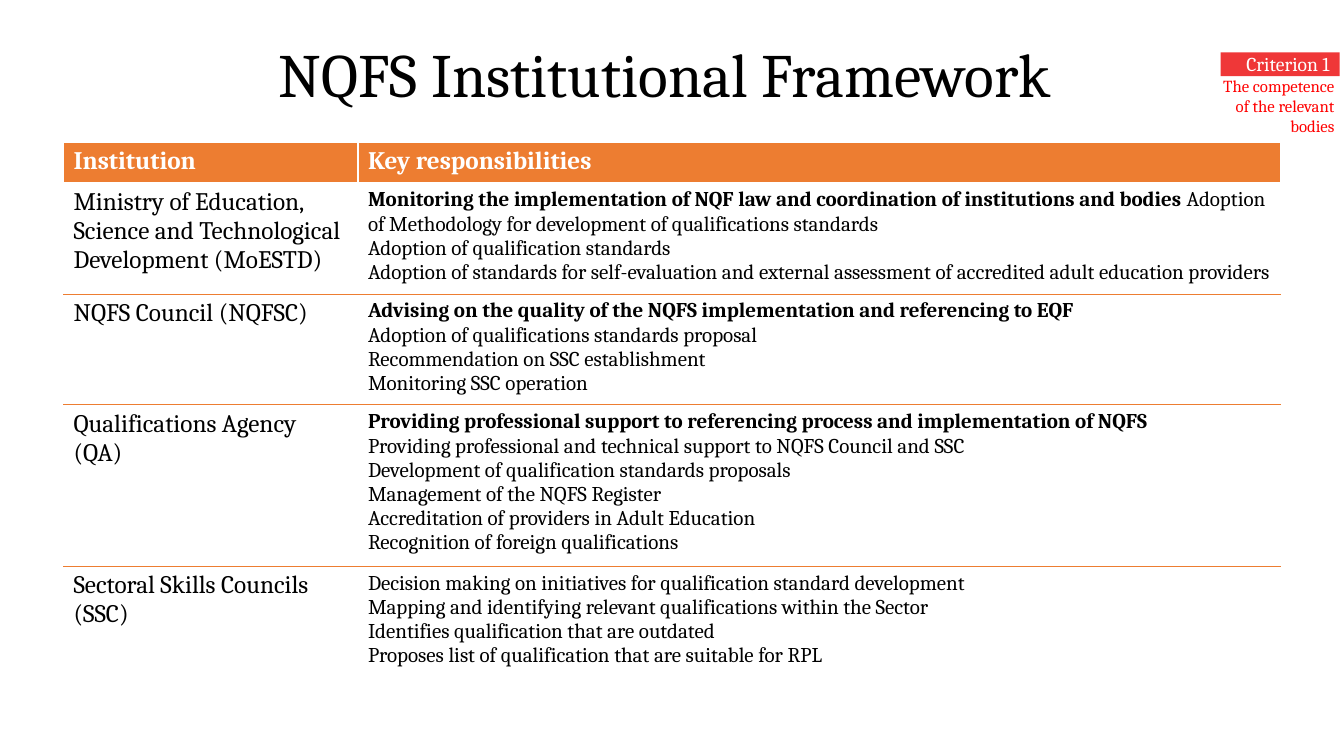
from dataclasses import dataclass

from lxml import etree
from pptx import Presentation
from pptx import util as u
from pptx.dml.color import RGBColor
from pptx.enum import shapes, text
from pptx.oxml import ns

COLORS = {
    "black": "000000",
    "white": "FFFFFF",
    "orange": "ED7D31",
    "badge": "EF3738",
    "red": "FF0000",
}
FONT = "Cambria"
PLAIN_TABLE_STYLE = "{2D5ABB26-0587-4C30-8999-92F81FD0307C}"
HEADER_HEIGHT = 1.03
COLUMN_WIDTHS = (7.42, 23.26)


@dataclass
class Institution:
    name: str
    mandate: str
    tasks: list[str]
    height: float
    tasks_follow_mandate: bool = False

    def paragraphs(self) -> list[list[tuple[str, bool]]]:
        lines = [[(task, False)] for task in self.tasks]
        if self.tasks_follow_mandate:
            lines[0].insert(0, (self.mandate + " ", True))
        elif self.mandate:
            lines.insert(0, [(self.mandate, True)])
        return lines


INSTITUTIONS = [
    Institution(
        "Ministry of Education, Science and Technological Development (MoESTD)",
        "Monitoring the implementation of NQF law and coordination of institutions and bodies",
        [
            "Adoption of Methodology for development of qualifications standards",
            "Adoption of qualification standards",
            "Adoption of standards for self-evaluation and external assessment "
            "of accredited adult education providers",
        ],
        2.7,
        tasks_follow_mandate=True,
    ),
    Institution(
        "NQFS Council (NQFSC)",
        "Advising on the quality of the NQFS implementation and referencing to EQF",
        [
            "Adoption of qualifications standards proposal",
            "Recommendation on SSC establishment",
            "Monitoring SSC operation",
        ],
        2.7,
    ),
    Institution(
        "Qualifications Agency (QA)",
        "Providing professional support to referencing process and implementation of NQFS",
        [
            "Providing professional and technical support to NQFS Council and SSC",
            "Development of qualification standards proposals",
            "Management of the NQFS Register",
            "Accreditation of providers in Adult Education",
            "Recognition of foreign qualifications",
        ],
        3.93,
    ),
    Institution(
        "Sectoral Skills Councils (SSC)",
        "",
        [
            "Decision making on initiatives for qualification standard development",
            "Mapping and identifying relevant qualifications within the Sector",
            "Identifies qualification that are outdated",
            "Proposes list of qualification that are suitable for RPL",
        ],
        2.7,
    ),
]


def rgb(color: str) -> RGBColor:
    return RGBColor.from_string(COLORS[color])


def write(frame, content, *, size, color="black", bold=False, align="LEFT",
          anchor="TOP", margins=(0.25, 0.13, 0.25, 0.13), spacing=None) -> None:
    paragraphs = [[(content, bold)]] if isinstance(content, str) else content
    frame.word_wrap = True
    frame.vertical_anchor = text.MSO_ANCHOR[anchor]
    frame.margin_left, frame.margin_top, frame.margin_right, frame.margin_bottom = map(u.Cm, margins)
    for index, runs in enumerate(paragraphs):
        paragraph = frame.add_paragraph() if index else frame.paragraphs[0]
        paragraph.alignment = text.PP_ALIGN[align]
        if spacing:
            paragraph.line_spacing = spacing
        for words, heavy in runs:
            run = paragraph.add_run()
            run.text = words
            run.font.name = FONT
            run.font.size = u.Pt(size)
            run.font.bold = heavy
            run.font.color.rgb = rgb(color)


def add_borders(cell, borders: dict[str, tuple[str, float]]) -> None:
    properties = cell._tc.get_or_add_tcPr()
    for side in "LRTB":
        if side in borders:
            color, width = borders[side]
            line = etree.SubElement(properties, ns.qn(f"a:ln{side}"), w=str(u.Pt(width)))
            fill = etree.SubElement(line, ns.qn("a:solidFill"))
            etree.SubElement(fill, ns.qn("a:srgbClr"), val=COLORS[color])


def add_criterion(slide) -> None:
    badge = slide.shapes.add_shape(
        shapes.MSO_SHAPE.RECTANGLE, u.Cm(30.76), u.Cm(1.32), u.Cm(3), u.Cm(0.6))
    badge.shadow.inherit = False
    badge.fill.solid()
    badge.fill.fore_color.rgb = rgb("badge")
    badge.line.fill.background()
    write(badge.text_frame, "Criterion 1", size=14, color="white", align="RIGHT",
          margins=(0.25, 0, 0.25, 0))
    description = slide.shapes.add_textbox(u.Cm(30.38), u.Cm(1.91), u.Cm(3.35), u.Cm(1.55))
    write(description.text_frame, "The competence of the relevant bodies", size=12,
          color="red", align="RIGHT", margins=(0.25, 0, 0.1, 0))


def add_responsibilities(slide) -> None:
    heights = [HEADER_HEIGHT] + [institution.height for institution in INSTITUTIONS]
    frame = slide.shapes.add_table(
        len(heights), len(COLUMN_WIDTHS), u.Cm(1.6), u.Cm(3.58),
        u.Cm(sum(COLUMN_WIDTHS)), u.Cm(sum(heights)))
    table = frame.table
    table.horz_banding = False
    table._tbl.tblPr.find(ns.qn("a:tableStyleId")).text = PLAIN_TABLE_STYLE
    for column, width in zip(table.columns, COLUMN_WIDTHS):
        column.width = u.Cm(width)
    for row, height in zip(table.rows, heights):
        row.height = u.Cm(height)

    for column, heading in enumerate(("Institution", "Key responsibilities")):
        cell = table.cell(0, column)
        add_borders(cell, dict.fromkeys("LRTB", ("white", 1)))
        cell.fill.solid()
        cell.fill.fore_color.rgb = rgb("orange")
        write_cell(cell, heading, size=18, color="white", bold=True)

    rule = ("orange", 0.5)
    for row, institution in enumerate(INSTITUTIONS, start=1):
        borders = {"T": ("white", 1) if row == 1 else rule}
        if row < len(INSTITUTIONS):
            borders["B"] = rule
        for column, (content, size) in enumerate(
                ((institution.name, 18), (institution.paragraphs(), 15))):
            cell = table.cell(row, column)
            add_borders(cell, borders)
            cell.fill.background()
            write_cell(cell, content, size=size)


def write_cell(cell, content, **style) -> None:
    write(cell.text_frame, content, **style)
    cell.vertical_anchor = text.MSO_ANCHOR.TOP
    body = cell.text_frame._txBody.find(ns.qn("a:bodyPr"))
    body.attrib.clear()


def main() -> None:
    deck = Presentation()
    deck.slide_width, deck.slide_height = u.Cm(33.87), u.Cm(19.05)
    slide = deck.slides.add_slide(deck.slide_layouts[6])
    add_criterion(slide)
    title = slide.shapes.add_textbox(u.Cm(2.33), u.Cm(1.02), u.Cm(29.21), u.Cm(1.85))
    write(title.text_frame, "NQFS Institutional Framework ", size=44, align="CENTER",
          anchor="MIDDLE", spacing=0.9)
    add_responsibilities(slide)
    deck.save("out.pptx")


if __name__ == "__main__":
    main()
